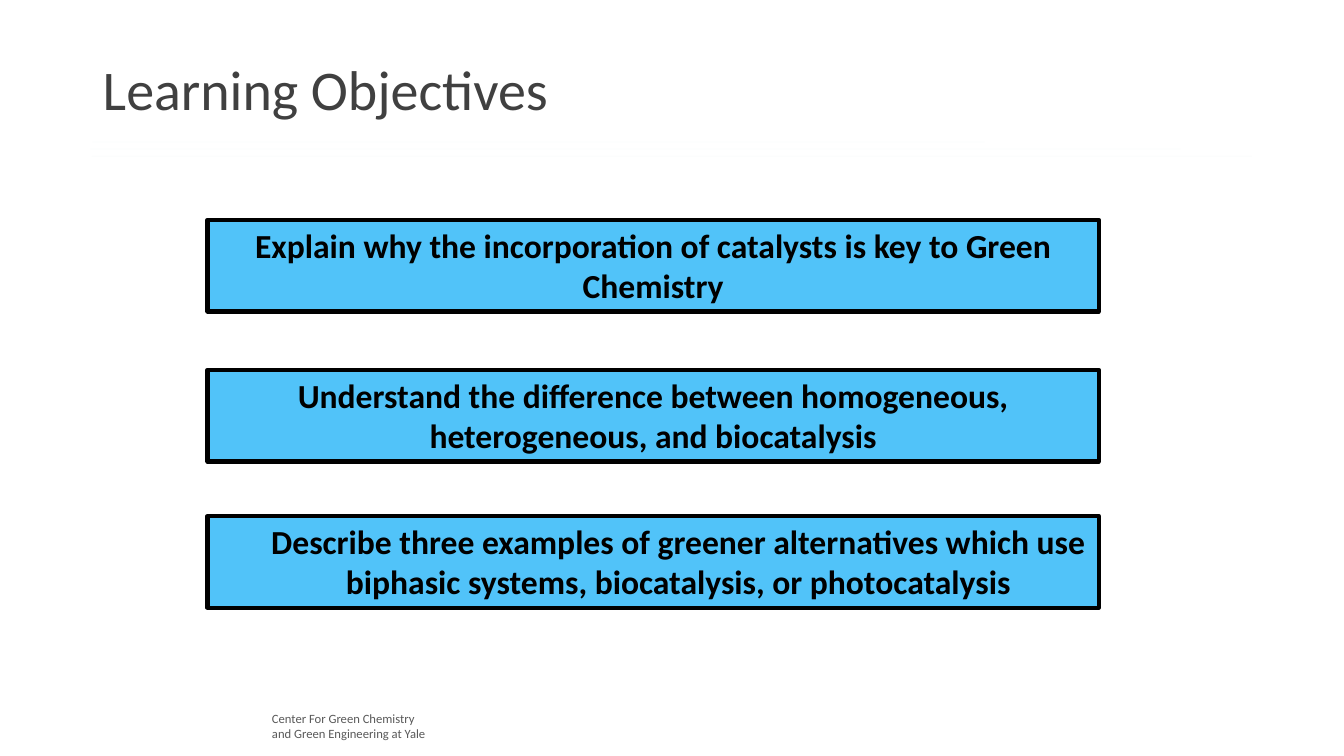
from dataclasses import dataclass

from lxml.etree import SubElement
from pptx import Presentation
from pptx.dml.color import RGBColor
from pptx.enum.shapes import MSO_CONNECTOR, MSO_SHAPE
from pptx.enum.text import MSO_ANCHOR, MSO_AUTO_SIZE, PP_ALIGN
from pptx.oxml.ns import qn
from pptx.slide import Slide
from pptx.text.text import TextFrame
from pptx.util import Pt


@dataclass(frozen=True)
class Objective:
    text: str
    top: float
    level: int = 0


@dataclass(frozen=True)
class Rule:
    left: float
    right: float
    y: float
    color: str


OBJECTIVES = [
    Objective("Explain why the incorporation of catalysts is key to Green Chemistry", 157),
    Objective("Understand the difference between homogeneous, heterogeneous, and biocatalysis", 264.2),
    Objective("Describe three examples of greener alternatives which use "
              "biphasic systems, biocatalysis, or photocatalysis", 368.6, level=1),
]
RULES = [
    Rule(66.2, 703.4, 101.5, "4EB3CF"),
    Rule(64.8, 843.1, 106.5, "44C1A3"),
    Rule(65.5, 894.2, 111.6, "37A76F"),
]
CREDIT = ["Center For Green Chemistry", "and Green Engineering at Yale"]

BOX_LEFT, BOX_WIDTH, BOX_HEIGHT = 148.3, 636.5, 65.5
LEVEL_INDENT = 36
RULE_ALPHA = "2000"  # thousandths of a percent: the rules are barely visible

TITLE_FONT = {"name": "Calibri", "size": Pt(40), "bold": False}
OBJECTIVE_FONT = {"name": "Calibri", "size": Pt(24), "bold": True}
CREDIT_FONT = {"name": "Calibri", "size": Pt(9), "bold": False}


def rgb(hex_color: str) -> RGBColor:
    return RGBColor.from_string(hex_color)


def write(frame: TextFrame, lines: list[str], font: dict, color: str,
          align: PP_ALIGN = PP_ALIGN.LEFT) -> None:
    frame.word_wrap = True
    frame.auto_size = MSO_AUTO_SIZE.NONE
    for index, line in enumerate(lines):
        paragraph = frame.add_paragraph() if index else frame.paragraphs[0]
        paragraph.alignment = align
        run = paragraph.add_run()
        run.text = line
        for attribute, value in font.items():
            setattr(run.font, attribute, value)
        run.font.color.rgb = rgb(color)


def draw_rule(slide: Slide, rule: Rule) -> None:
    line = slide.shapes.add_connector(
        MSO_CONNECTOR.STRAIGHT, Pt(rule.left), Pt(rule.y), Pt(rule.right), Pt(rule.y))
    line.line.width = Pt(0.5)
    line.line.color.rgb = rgb(rule.color)
    properties = line._element.spPr
    SubElement(properties.find(".//" + qn("a:srgbClr")), qn("a:alpha"), val=RULE_ALPHA)
    SubElement(properties, qn("a:effectLst"))


def draw_objective(slide: Slide, objective: Objective) -> None:
    box = slide.shapes.add_shape(
        MSO_SHAPE.RECTANGLE, Pt(BOX_LEFT), Pt(objective.top), Pt(BOX_WIDTH), Pt(BOX_HEIGHT))
    box.shadow.inherit = False
    box.fill.solid()
    box.fill.fore_color.rgb = rgb("51C3F9")
    box.line.color.rgb = rgb("000000")
    box.line.width = Pt(3)
    frame = box.text_frame
    frame.vertical_anchor = MSO_ANCHOR.TOP
    write(frame, [objective.text], OBJECTIVE_FONT, "000000", PP_ALIGN.CENTER)
    if objective.level:
        paragraph = frame.paragraphs[0]
        paragraph.level = objective.level
        indent = paragraph._p.get_or_add_pPr()
        indent.set("marL", str(Pt(LEVEL_INDENT * objective.level)))
        indent.set("indent", "0")


def main() -> None:
    presentation = Presentation()
    presentation.slide_width, presentation.slide_height = Pt(960), Pt(540)
    slide = presentation.slides.add_slide(presentation.slide_layouts[5])

    # Credit line at the foot
    credit = slide.shapes.add_textbox(Pt(187.2), Pt(504), Pt(133.9), Pt(28.8))
    write(credit.text_frame, CREDIT, CREDIT_FONT, "595959")

    # Rules under the title
    for rule in RULES:
        draw_rule(slide, rule)

    # Title
    heading = slide.shapes.title
    heading.left, heading.top, heading.width, heading.height = Pt(66.2), Pt(13.7), Pt(828), Pt(104.4)
    heading.text_frame.vertical_anchor = MSO_ANCHOR.MIDDLE
    write(heading.text_frame, ["Learning Objectives"], TITLE_FONT, "404040")
    heading.text_frame.paragraphs[0].line_spacing = 0.9

    # Objectives
    for objective in OBJECTIVES:
        draw_objective(slide, objective)

    presentation.save("out.pptx")


if __name__ == "__main__":
    main()
